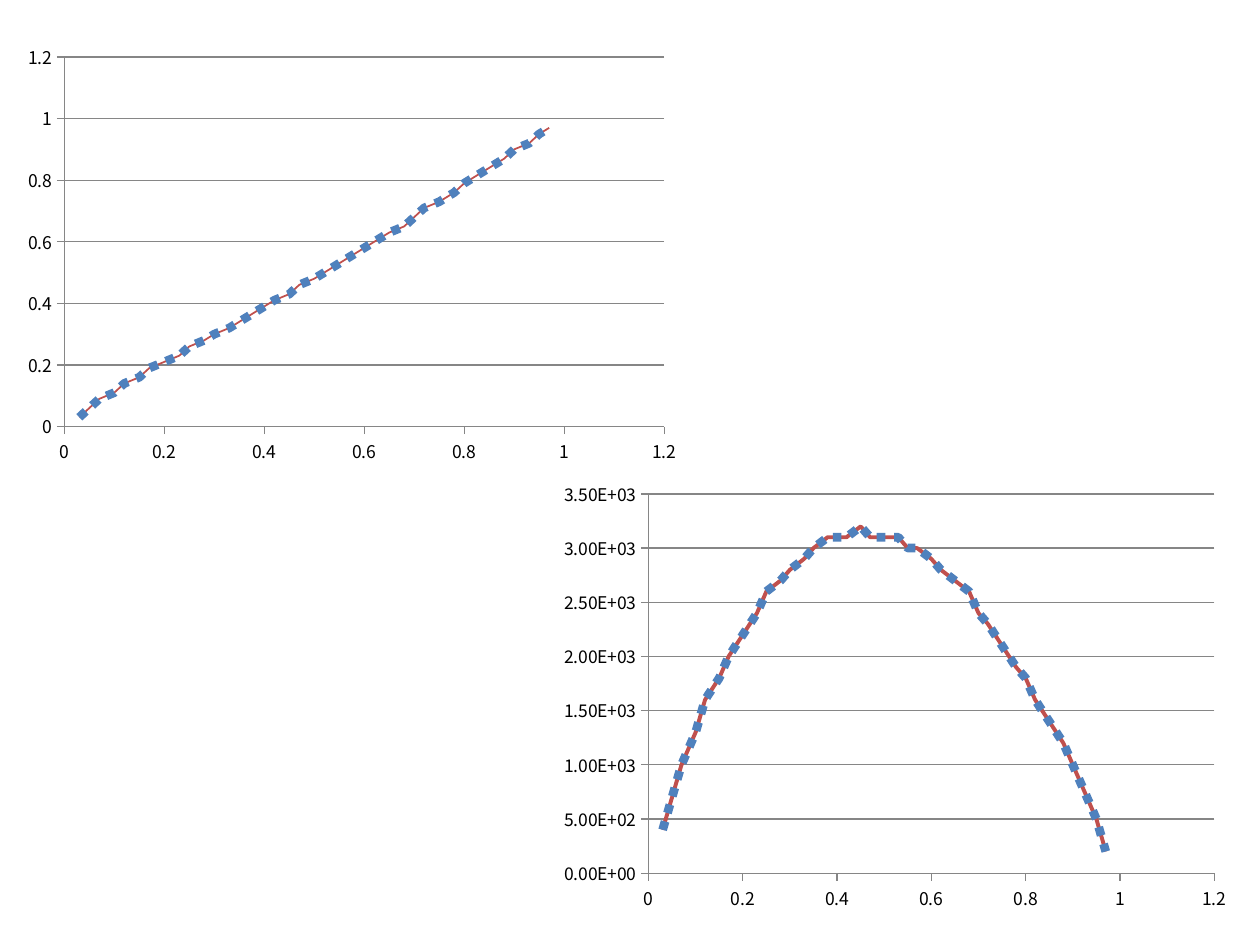
from dataclasses import dataclass

from lxml import etree
from pptx import Presentation
from pptx import util as u
from pptx.chart.data import XyChartData
from pptx.dml.color import RGBColor
from pptx.enum import chart as ch
from pptx.enum import dml
from pptx.oxml import ns

BLACK = RGBColor(0x00, 0x00, 0x00)
GREY = RGBColor(0x86, 0x86, 0x86)
BLUE = RGBColor(0x4F, 0x81, 0xBD)
RED = RGBColor(0xC0, 0x50, 0x4D)

FRACTIONS = [round(step / 40, 2) for step in range(1, 40)]
DIAGONAL = [
    0.03, 0.06, 0.09, 0.11, 0.14, 0.16, 0.19, 0.21, 0.23, 0.26,
    0.28, 0.3, 0.32, 0.34, 0.37, 0.39, 0.41, 0.43, 0.46, 0.48,
    0.51, 0.53, 0.55, 0.58, 0.6, 0.63, 0.65, 0.68, 0.71, 0.73,
    0.76, 0.79, 0.81, 0.84, 0.87, 0.9, 0.92, 0.95, 0.97,
]
ARCH = [
    400, 700, 1000, 1300, 1600, 1800, 2000, 2200, 2400, 2600,
    2700, 2800, 2900, 3000, 3100, 3100, 3100, 3200, 3100, 3100,
    3100, 3000, 3000, 2900, 2800, 2700, 2600, 2400, 2300, 2100,
    1900, 1800, 1600, 1400, 1200, 1000, 700, 500, 200,
]


@dataclass
class ChartSlide:
    slide: object
    font: str = "Noto Sans CJK KR"
    size: int = 10

    def curve_chart(self, box, plot, values, top, step, number_format, red_width):
        """Draw the values twice: a dotted blue curve and a solid red one."""
        data = XyChartData()
        for name in ("Series 1", "Series 2"):
            series = data.add_series(name)
            for x, y in zip(FRACTIONS, values):
                series.add_data_point(x, y)
        chart = self.slide.shapes.add_chart(
            ch.XL_CHART_TYPE.XY_SCATTER_SMOOTH_NO_MARKERS,
            *(u.Inches(length) for length in box), data).chart
        chart.has_legend = False
        chart.has_title = False
        chart.font.name = self.font
        chart.font.size = u.Pt(self.size)
        chart.font.color.rgb = BLACK
        chart.plots[0].vary_by_categories = False

        dotted, solid = chart.plots[0].series
        self.curve(dotted, BLUE, 5)
        dotted.format.line.dash_style = dml.MSO_LINE.ROUND_DOT
        self.curve(solid, RED, red_width)

        self.axis(chart.category_axis, 1.2, 0.2, "General")
        self.axis(chart.value_axis, top, step, number_format)
        chart.category_axis.has_major_gridlines = False
        chart.value_axis.has_major_gridlines = True
        self.grey_line(chart.value_axis.major_gridlines.format.line)
        self.place_plot(chart, plot)

    def curve(self, series, color, width):
        series.smooth = True
        series.marker.style = ch.XL_MARKER_STYLE.NONE
        series.format.line.color.rgb = color
        series.format.line.width = u.Pt(width)

    def axis(self, axis, top, step, number_format):
        axis.minimum_scale = 0
        axis.maximum_scale = top
        axis.major_unit = step
        axis.major_tick_mark = ch.XL_TICK_MARK.OUTSIDE
        axis.minor_tick_mark = ch.XL_TICK_MARK.NONE
        axis.tick_labels.number_format = number_format
        axis.tick_labels.number_format_is_linked = False
        self.grey_line(axis.format.line)

    def grey_line(self, line):
        line.color.rgb = GREY
        line.width = u.Pt(0.75)

    def place_plot(self, chart, plot):
        """Fix the inner plot area, given as fractions of the chart."""
        area = chart._chartSpace.find(".//" + ns.qn("c:plotArea"))
        layout = area.find(ns.qn("c:layout"))
        if layout is not None:
            area.remove(layout)
        layout = etree.Element(ns.qn("c:layout"))
        area.insert(0, layout)
        manual = etree.SubElement(layout, ns.qn("c:manualLayout"))
        settings = [("layoutTarget", "inner"), ("xMode", "edge"), ("yMode", "edge"),
                    *zip("xywh", plot)]
        for tag, value in settings:
            etree.SubElement(manual, ns.qn("c:" + tag), val=str(value))


def main():
    deck = Presentation()
    deck.slide_width, deck.slide_height = u.Inches(10), u.Inches(7.5)
    page = ChartSlide(deck.slides.add_slide(deck.slide_layouts[6]))
    page.curve_chart((0.12, 0.29, 5.35, 3.46), (0.073, 0.047, 0.89, 0.848),
                     DIAGONAL, 1.2, 0.2, "General", 1)
    page.curve_chart((4.37, 3.75, 5.47, 3.55), (0.142, 0.048, 0.821, 0.848),
                     ARCH, 3500, 500, "0.00E+00", 2.25)
    deck.save("out.pptx")


if __name__ == "__main__":
    main()
